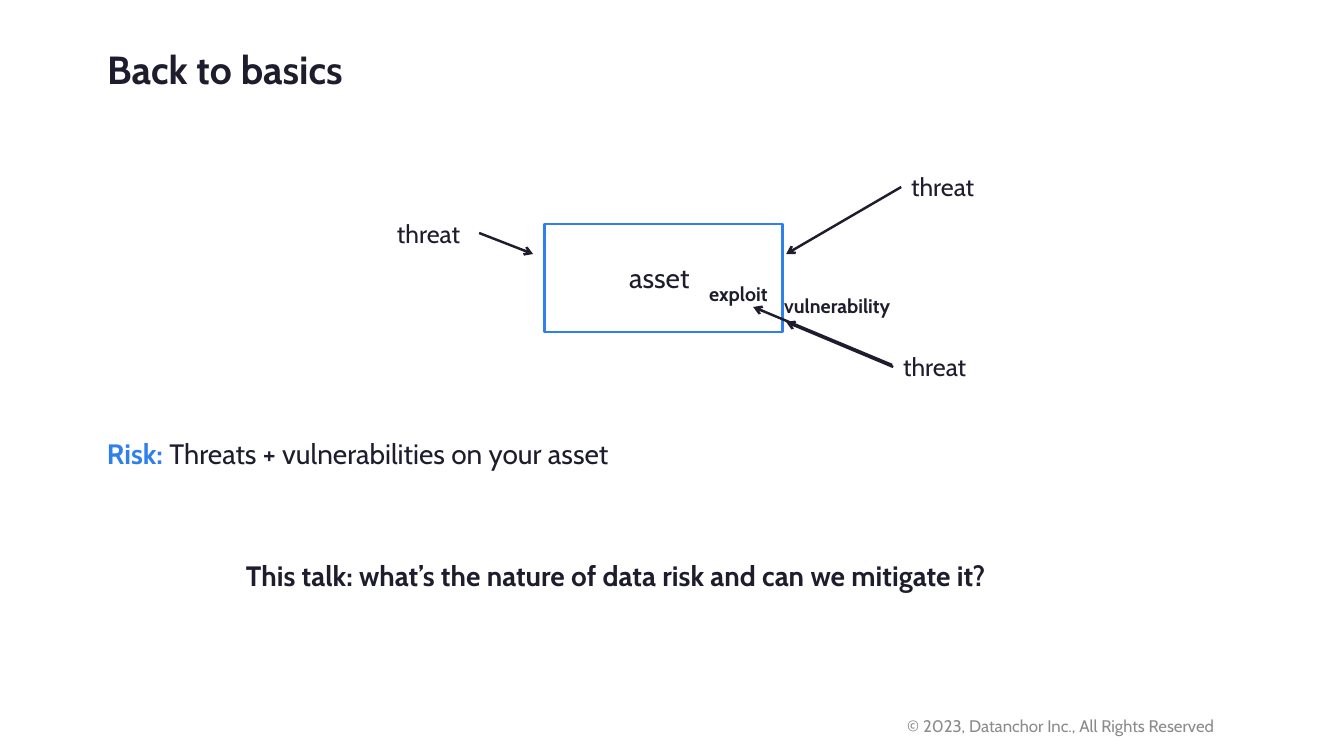
"""Build the "Back to basics" slide: threats, vulnerability and exploit around an asset."""
from lxml.etree import SubElement
from pptx import Presentation
from pptx.dml.color import RGBColor
from pptx.enum.shapes import MSO_CONNECTOR, MSO_SHAPE
from pptx.enum.text import MSO_ANCHOR, MSO_AUTO_SIZE, PP_ALIGN
from pptx.oxml.ns import qn
from pptx.util import Inches, Pt

INK = RGBColor(0x1D, 0x1D, 0x2E)
BLUE = RGBColor(0x2F, 0x80, 0xED)
GREY = RGBColor(0x8B, 0x8B, 0x8E)
FONT = "Cabin"
PX = Inches(1) / 100.8

TITLE = ("Back to basics", (97, 40, 298, 57))
ASSET_BOX = (544, 224, 238, 108)
LABELS = [
    ("© 2023, Datanchor Inc.,\u00a0All Rights Reserved", (897, 711, 353, 30), dict(size=12, color=GREY)),
    ("This talk: what’s the nature of data risk and can we mitigate it?", (236, 554, 873, 44), dict(bold=True)),
    ("asset", (619, 256, 91, 44), {}),
    ("vulnerability", (774, 289, 140, 34), dict(size=14, bold=True)),
    ("exploit", (699, 277, 87, 34), dict(size=14, bold=True)),
]
THREATS = [(387, 213), (901, 166), (893, 346)]
THREAT_SIZE = (92, 40)
RISK_BOX = (97, 432, 590, 44)
RISK = [("Risk: ", dict(color=BLUE, bold=True)), ("Threats + vulnerabilities on your asset", {})]
ARROWS = [
    ((479, 233), (533, 254)),
    ((901, 187), (786, 254)),
    ((893, 367), (786, 322)),
    ((892, 365), (753, 307)),
]


def emu(lengths):
    return [round(n * PX) for n in lengths]


def add_text(p, text, size=20, color=INK, bold=False):
    r = p.add_run()
    r.text = text
    r.font.name = FONT
    r.font.size = Pt(size)
    r.font.bold = bold
    r.font.color.rgb = color


def first_paragraph(sp):
    tf = sp.text_frame
    tf.word_wrap = True
    tf.auto_size = MSO_AUTO_SIZE.NONE
    tf.vertical_anchor = MSO_ANCHOR.TOP
    p = tf.paragraphs[0]
    p.alignment = PP_ALIGN.LEFT
    p.line_spacing = 1.0
    return p


def add_label(s, box, runs):
    p = first_paragraph(s.shapes.add_textbox(*emu(box)))
    for text, style in runs:
        add_text(p, text, **style)


def add_arrow(s, start, end):
    line = s.shapes.add_connector(MSO_CONNECTOR.STRAIGHT, *emu(start + end))
    line.line.color.rgb = INK
    line.line.width = Pt(1.75)
    SubElement(line.line._get_or_add_ln(), qn("a:tailEnd"), type="arrow")
    SubElement(line._element.spPr, qn("a:effectLst"))


def main():
    prs = Presentation()
    prs.slide_width, prs.slide_height = Inches(13.33), Inches(7.5)
    s = prs.slides.add_slide(prs.slide_layouts[5])

    text, box = TITLE
    title = s.shapes.title
    title.left, title.top, title.width, title.height = emu(box)
    add_text(first_paragraph(title), text, size=28, bold=True)

    asset = s.shapes.add_shape(MSO_SHAPE.RECTANGLE, *emu(ASSET_BOX))
    asset.shadow.inherit = False
    asset.fill.background()
    asset.line.color.rgb = BLUE
    asset.line.width = Pt(2)

    for start, end in ARROWS:
        add_arrow(s, start, end)
    for text, box, style in LABELS:
        add_label(s, box, [(text, style)])
    for corner in THREATS:
        add_label(s, corner + THREAT_SIZE, [("threat", dict(size=18))])
    add_label(s, RISK_BOX, RISK)

    prs.save("out.pptx")


if __name__ == "__main__":
    main()
